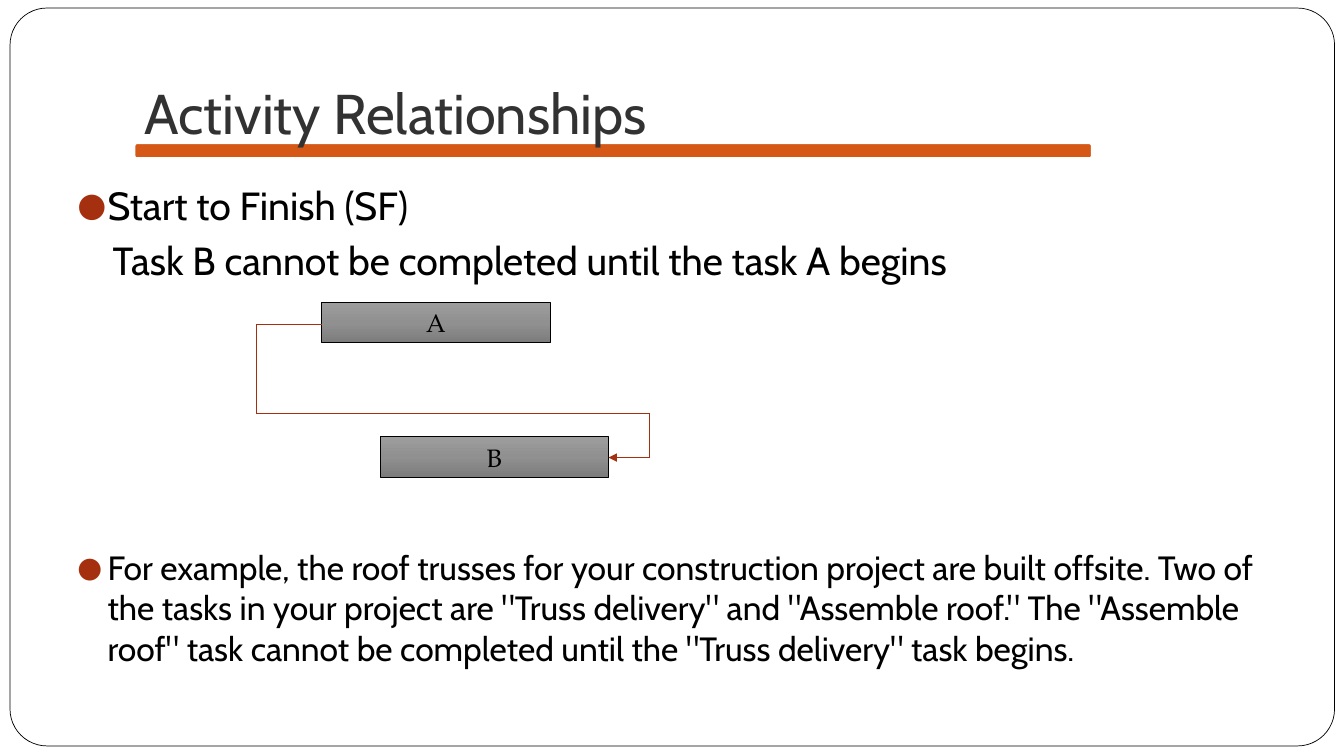
from copy import deepcopy
from dataclasses import dataclass
from itertools import pairwise

from lxml.etree import SubElement
from pptx import Presentation
from pptx.dml.color import RGBColor
from pptx.enum.shapes import MSO_CONNECTOR, MSO_SHAPE
from pptx.enum.text import MSO_ANCHOR, MSO_AUTO_SIZE, PP_ALIGN
from pptx.oxml.ns import qn
from pptx.util import Inches, Pt


@dataclass(frozen=True)
class Theme:
    heading_font: str = "Cabin"
    task_font: str = "TeX Gyre Pagella"
    paper: str = "FFFFFF"
    ink: str = "000000"
    heading: str = "323232"
    bar: str = "D55816"
    accent: str = "A5300F"
    task_gradient: tuple = ((0, "9D9D9D"), (0.5, "909090"), (1, "7C7C7C"))
    title_size: int = 40
    lead_size: int = 28
    example_size: int = 24
    task_size: int = 18
    hairline: float = 0.5
    bar_outline: float = 1.5
    paragraph_gap: float = 5.8
    diagram_gap: float = 188


class RelationshipSlide:
    cell = Inches(1 / 3)
    columns = 40
    rows = 22.5

    def __init__(self, deck, theme):
        deck.slide_width = self.span(self.columns)
        deck.slide_height = self.span(self.rows)
        self.theme = theme
        self.slide = deck.slides.add_slide(deck.slide_layouts[1])
        self.backdrop_count = 0

    def span(self, cells):
        return int(cells * self.cell)

    def place(self, item, area):
        item.left, item.top, item.width, item.height = map(self.span, area)

    def add_text(self, paragraph, text, font, size, color):
        run = paragraph.add_run()
        run.text = text
        run.font.name = font
        run.font.size = Pt(size)
        run.font.color.rgb = RGBColor.from_string(color)

    def outline(self, item, color, width):
        item.line.color.rgb = RGBColor.from_string(color)
        item.line.width = Pt(width)

    def block(self, preset, area, line, width):
        block = self.slide.shapes.add_shape(preset, *map(self.span, area))
        block.shadow.inherit = False
        self.outline(block, line, width)
        return block

    def backdrop(self, area, fill, line, width, rounding=None):
        panel = self.block(MSO_SHAPE.ROUNDED_RECTANGLE, area, line, width)
        panel.fill.solid()
        panel.fill.fore_color.rgb = RGBColor.from_string(fill)
        if rounding is not None:
            panel.adjustments[0] = rounding
        panel._element.getparent().insert(2 + self.backdrop_count, panel._element)
        self.backdrop_count += 1

    def title(self, text, area):
        heading = self.slide.shapes.title
        self.place(heading, area)
        frame = heading.text_frame
        frame.auto_size = MSO_AUTO_SIZE.NONE
        frame.vertical_anchor = MSO_ANCHOR.BOTTOM
        frame.margin_bottom = Inches(0.1)
        paragraph = frame.paragraphs[0]
        paragraph.alignment = PP_ALIGN.LEFT
        self.add_text(paragraph, text, self.theme.heading_font,
                      self.theme.title_size, self.theme.heading)

    def body(self, entries, area):
        explanation = self.slide.placeholders[1]
        self.place(explanation, area)
        frame = explanation.text_frame
        frame.auto_size = MSO_AUTO_SIZE.NONE
        for index, (text, size, gap, bulleted) in enumerate(entries):
            paragraph = frame.add_paragraph() if index else frame.paragraphs[0]
            paragraph.space_before = Pt(gap)
            self.bullet(paragraph, bulleted)
            self.add_text(paragraph, text, self.theme.heading_font, size, self.theme.ink)

    def bullet(self, paragraph, bulleted):
        properties = paragraph._p.get_or_add_pPr()
        properties.set("marL", str(Inches(0.3 if bulleted else 0.35)))
        properties.set("indent", str(Inches(-0.3 if bulleted else 0)))
        if not bulleted:
            SubElement(properties, qn("a:buNone"))
            return
        color = SubElement(properties, qn("a:buClr"))
        SubElement(color, qn("a:srgbClr"), val=self.theme.accent)
        SubElement(properties, qn("a:buSzPct"), val="85000")
        SubElement(properties, qn("a:buFont"), typeface=self.theme.heading_font)
        SubElement(properties, qn("a:buChar"), char="●")

    def task(self, label, area):
        bar = self.block(MSO_SHAPE.RECTANGLE, area, self.theme.ink, self.theme.hairline)
        bar.fill.gradient()
        first = bar.fill.gradient_stops[0]._gs
        first.addnext(deepcopy(first))
        for stop, (position, color) in zip(bar.fill.gradient_stops, self.theme.task_gradient):
            stop.position = position
            stop.color.rgb = RGBColor.from_string(color)
        bar.fill.gradient_angle = 270
        bar.text_frame.vertical_anchor = MSO_ANCHOR.MIDDLE
        paragraph = bar.text_frame.paragraphs[0]
        paragraph.alignment = PP_ALIGN.CENTER
        self.add_text(paragraph, label, self.theme.task_font,
                      self.theme.task_size, self.theme.ink)

    def dependency(self, corners):
        for start, end in pairwise(corners):
            segment = self.slide.shapes.add_connector(
                MSO_CONNECTOR.STRAIGHT, *map(self.span, start + end))
            self.outline(segment, self.theme.accent, self.theme.hairline)
            SubElement(segment._element.spPr, qn("a:effectLst"))
        SubElement(segment.line._get_or_add_ln(), qn("a:tailEnd"), type="triangle")


def main():
    deck = Presentation()
    theme = Theme()
    page = RelationshipSlide(deck, theme)

    page.backdrop((0.3, 0.24, 39.42, 21.96), theme.paper, theme.ink, theme.hairline, 0.05)
    page.backdrop((4, 4.26, 28.5, 0.45), theme.bar, theme.paper, theme.bar_outline)
    page.title("Activity Relationships", (4, 0.9, 34, 3.75))
    page.body([
        ("Start to Finish (SF)", theme.lead_size, theme.paragraph_gap, True),
        ("Task B cannot be completed until the task A begins",
         theme.lead_size, theme.paragraph_gap, False),
        ("For example, the roof trusses for your construction project are built offsite. "
         "Two of the tasks in your project are \"Truss delivery\" and \"Assemble roof.\" "
         "The \"Assemble roof\" task cannot be completed until the \"Truss delivery\" "
         "task begins.", theme.example_size, theme.diagram_gap, True),
    ], (2, 5.25, 36.96, 15.5))

    task_width, task_height = 6.8, 1.2
    a_left, a_top = 9.57, 9
    b_left, b_top = 11.31, 13
    exit_row, entry_row = a_top + 0.66, b_top + 0.62
    left_lane, right_lane, crossing_row = 7.63, 19.32, 12.3
    page.task("A", (a_left, a_top, task_width, task_height))
    page.task("B", (b_left, b_top, task_width, task_height))
    page.dependency([
        (a_left, exit_row),
        (left_lane, exit_row),
        (left_lane, crossing_row),
        (right_lane, crossing_row),
        (right_lane, entry_row),
        (b_left + task_width, entry_row),
    ])
    deck.save("out.pptx")


if __name__ == "__main__":
    main()
